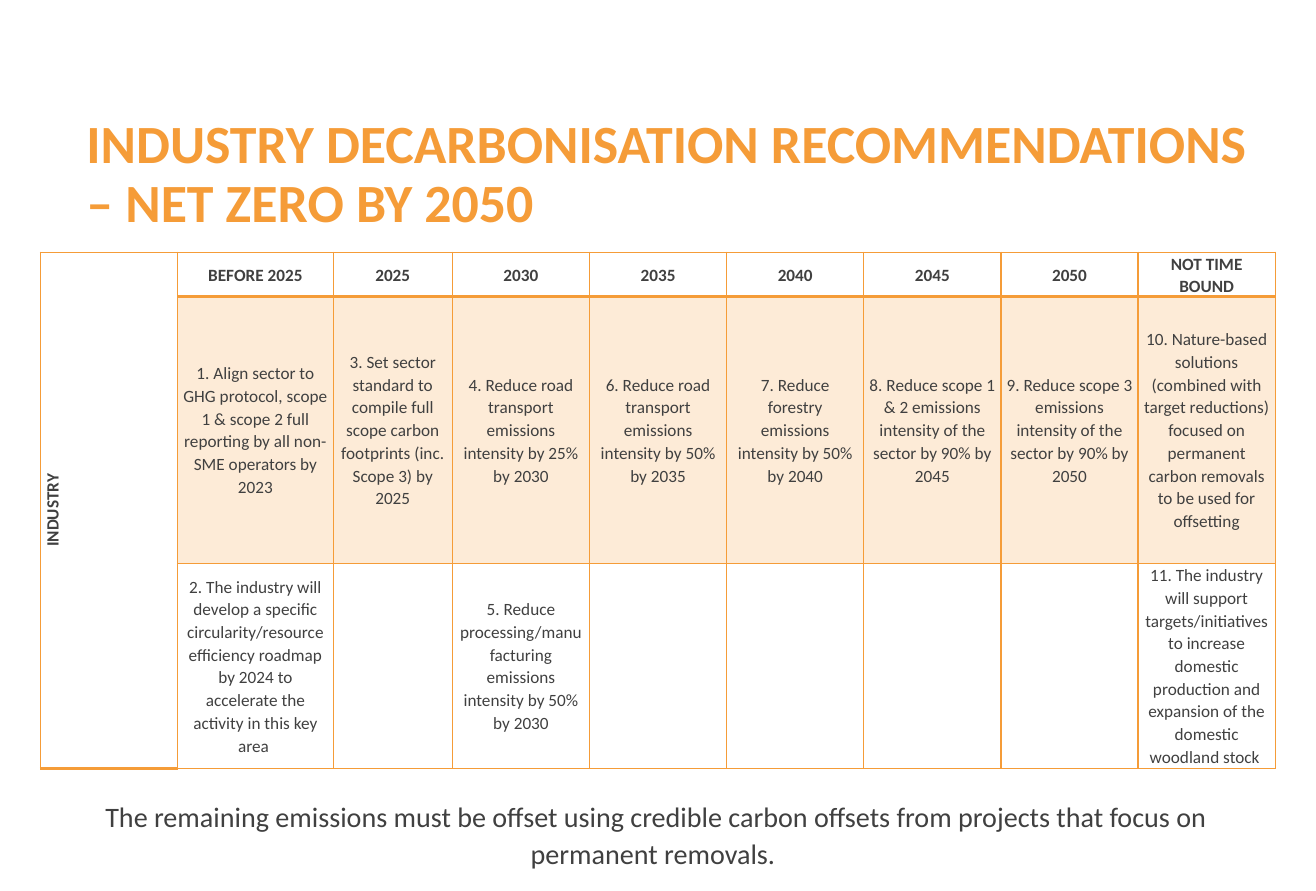
from dataclasses import dataclass

import lxml.etree
import pptx
import pptx.dml.color
import pptx.enum.text
import pptx.oxml.ns
import pptx.util

EMU_PER_PX = 1800


@dataclass(frozen=True)
class Theme:
    orange: str = "F59C38"
    ink: str = "404040"
    font: str = "Calibri"
    title_size: float = 34.4
    cell_size: float = 11
    footnote_size: float = 18
    tint_percent: int = 20
    line_spacing: float = 1.07
    space_after: float = 8


@dataclass(frozen=True)
class Box:
    left: int
    top: int
    width: int
    height: int


@dataclass(frozen=True)
class Period:
    heading: str
    width: int
    first: str
    second: str = ""


THEME = Theme()
CENTER = pptx.enum.text.PP_ALIGN.CENTER
LEFT = pptx.enum.text.PP_ALIGN.LEFT

TITLE = "INDUSTRY DECARBONISATION RECOMMENDATIONS – NET ZERO BY 2050"
FOOTNOTE = (
    "The remaining emissions must be offset using credible carbon offsets "
    "from projects that focus on permanent removals. "
)
SECTOR = "INDUSTRY"
COLUMN_WIDTH = 619
ROW_HEIGHTS = (200, 1204, 925)
PERIODS = (
    Period(
        "BEFORE 2025", 702,
        "1. Align sector to GHG protocol, scope 1 & scope 2 full reporting "
        "by all non-SME operators by 2023",
        "2. The industry will develop a specific circularity/resource efficiency "
        "roadmap by 2024 to accelerate the activity in this key area ",
    ),
    Period(
        "2025", 538,
        "3. Set sector standard to compile full scope carbon footprints "
        "(inc. Scope 3) by 2025",
    ),
    Period(
        "2030", COLUMN_WIDTH,
        "4. Reduce road transport emissions intensity by 25% by 2030",
        "5. Reduce processing/manufacturing emissions intensity by 50% by 2030",
    ),
    Period(
        "2035", COLUMN_WIDTH,
        "6. Reduce road transport emissions intensity by 50% by 2035",
    ),
    Period(
        "2040", COLUMN_WIDTH,
        "7. Reduce forestry emissions intensity by 50% by 2040",
    ),
    Period(
        "2045", COLUMN_WIDTH,
        "8. Reduce scope 1 & 2 emissions intensity of the sector by 90% by 2045",
    ),
    Period(
        "2050", COLUMN_WIDTH,
        "9. Reduce scope 3 emissions intensity of the sector by 90% by 2050",
    ),
    Period(
        "NOT TIME BOUND", COLUMN_WIDTH,
        "10. Nature-based solutions (combined with target reductions) focused on "
        "permanent carbon removals to be used for offsetting",
        "11. The industry will support targets/initiatives to increase domestic "
        "production and expansion of the domestic woodland stock ",
    ),
)


def px(length: int) -> pptx.util.Emu:
    return pptx.util.Emu(length * EMU_PER_PX)


def write(
    frame: pptx.text.text.TextFrame,
    text: str,
    size: float,
    color: str,
    bold: bool = False,
    align: pptx.enum.text.PP_ALIGN = CENTER,
    spacing: float = THEME.line_spacing,
    after: float = THEME.space_after,
) -> None:
    paragraph = frame.paragraphs[0]
    paragraph.text = text
    paragraph.alignment = align
    paragraph.line_spacing = spacing
    paragraph.space_after = pptx.util.Pt(after)
    paragraph.font.name = THEME.font
    paragraph.font.size = pptx.util.Pt(size)
    paragraph.font.bold = bold
    paragraph.font.color.rgb = pptx.dml.color.RGBColor.from_string(color)


def add_text(slide: pptx.slide.Slide, box: Box) -> pptx.text.text.TextFrame:
    shape = slide.shapes.add_textbox(
        px(box.left), px(box.top), px(box.width), px(box.height)
    )
    shape.text_frame.word_wrap = True
    return shape.text_frame


def set_borders(cell: pptx.table._Cell, bottom: float) -> None:
    qn = pptx.oxml.ns.qn
    properties = cell._tc.get_or_add_tcPr()
    for side, width in (("lnL", 1), ("lnR", 1), ("lnT", 1), ("lnB", bottom)):
        line = lxml.etree.SubElement(
            properties, qn(f"a:{side}"), w=str(pptx.util.Pt(width))
        )
        fill = lxml.etree.SubElement(line, qn("a:solidFill"))
        lxml.etree.SubElement(fill, qn("a:srgbClr"), val=THEME.orange)


def set_tint(cell: pptx.table._Cell) -> None:
    qn = pptx.oxml.ns.qn
    cell.fill.solid()
    cell.fill.fore_color.rgb = pptx.dml.color.RGBColor.from_string(THEME.orange)
    color = cell._tc.tcPr.find(f"{qn('a:solidFill')}/{qn('a:srgbClr')}")
    lxml.etree.SubElement(color, qn("a:alpha"), val=str(THEME.tint_percent * 1000))


def style_cell(cell: pptx.table._Cell, text: str, heading: bool, tinted: bool) -> None:
    cell.margin_left = cell.margin_right = px(25)
    cell.margin_top = cell.margin_bottom = 0
    cell.vertical_anchor = pptx.enum.text.MSO_ANCHOR.MIDDLE
    set_borders(cell, 2 if heading else 1)
    if tinted:
        set_tint(cell)
    else:
        cell.fill.background()
    write(cell.text_frame, text, THEME.cell_size, THEME.ink, heading)


def add_roadmap(slide: pptx.slide.Slide, left: int, top: int) -> None:
    columns = [(SECTOR, "", "")] + [(p.heading, p.first, p.second) for p in PERIODS]
    widths = [COLUMN_WIDTH] + [p.width for p in PERIODS]
    roadmap = slide.shapes.add_table(
        len(ROW_HEIGHTS), len(columns),
        px(left), px(top), px(sum(widths)), px(sum(ROW_HEIGHTS)),
    ).table
    roadmap.first_row = False
    roadmap.horz_banding = False
    for row, height in zip(roadmap.rows, ROW_HEIGHTS):
        row.height = px(height)
    for column_index, (texts, width) in enumerate(zip(columns, widths)):
        roadmap.columns[column_index].width = px(width)
        for row_index, text in enumerate(texts):
            heading = row_index == 0 or column_index == 0
            tinted = row_index == 1 and column_index > 0
            style_cell(roadmap.cell(row_index, column_index), text, heading, tinted)
    sector = roadmap.cell(0, 0)
    sector.merge(roadmap.cell(len(ROW_HEIGHTS) - 1, 0))
    sector._tc.get_or_add_tcPr().set("vert", "vert270")


def main() -> None:
    deck = pptx.Presentation()
    deck.slide_width, deck.slide_height = px(5940), px(4020)
    slide = deck.slides.add_slide(deck.slide_layouts[6])
    write(
        add_text(slide, Box(340, 505, 5400, 295)), TITLE, THEME.title_size,
        THEME.orange, bold=True, align=LEFT, spacing=0.9, after=0,
    )
    add_roadmap(slide, 183, 1138)
    footnote = add_text(slide, Box(183, 3573, 5558, 371))
    footnote.auto_size = pptx.enum.text.MSO_AUTO_SIZE.SHAPE_TO_FIT_TEXT
    write(footnote, FOOTNOTE, THEME.footnote_size, THEME.ink)
    deck.save("out.pptx")


if __name__ == "__main__":
    main()
